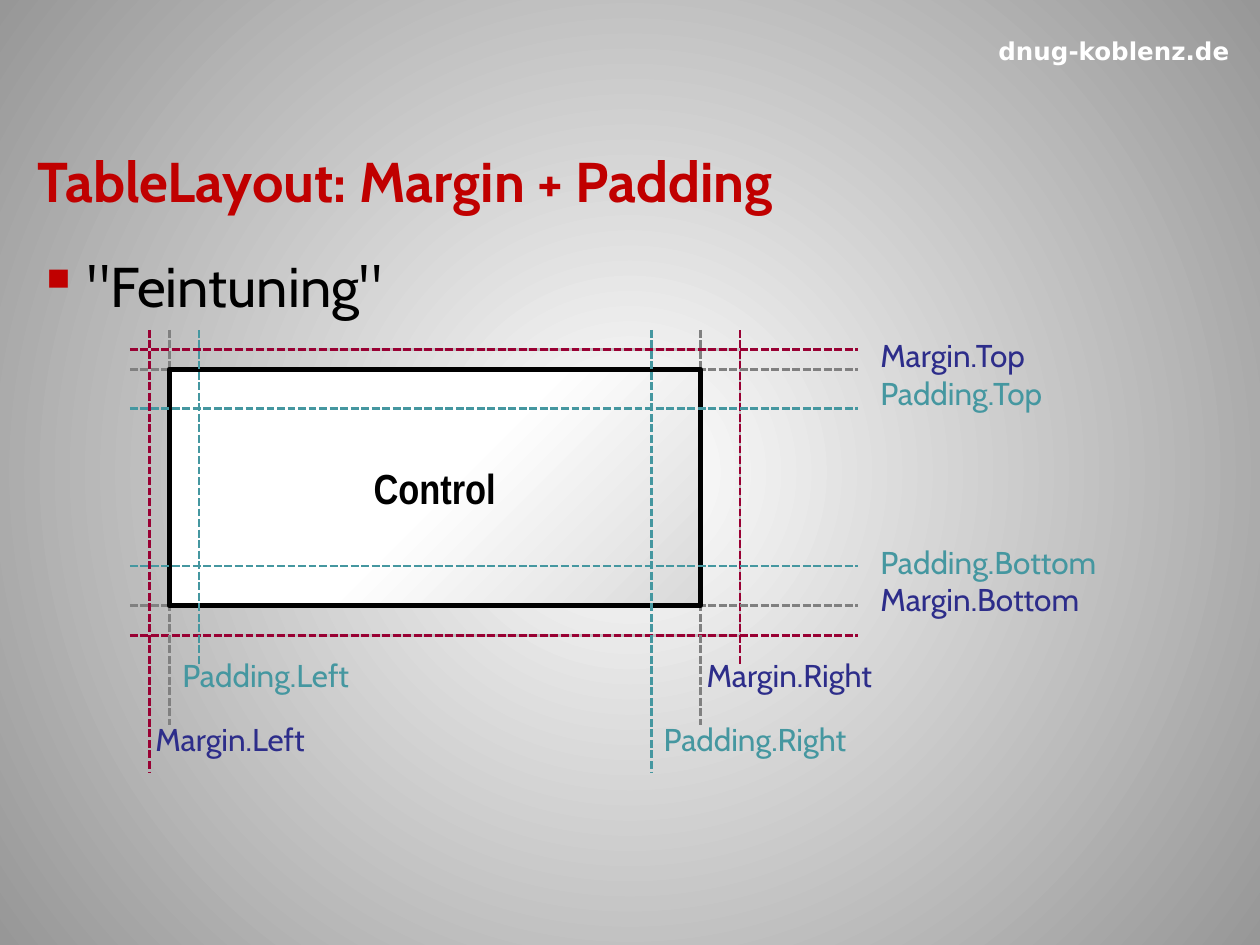
from dataclasses import dataclass
from lxml import etree
from pptx import Presentation
from pptx.dml.color import RGBColor as RGB
from pptx.enum.dml import MSO_LINE as Dash
from pptx.enum.shapes import MSO_CONNECTOR as Conn, MSO_SHAPE as Form
from pptx.enum.text import MSO_ANCHOR as Anchor, PP_ALIGN as Align
from pptx.oxml.ns import qn
from pptx.util import Pt


@dataclass(frozen=True)
class Theme:
    font: str = "Cabin"
    web: str = "DejaVu Sans"
    narrow: str = "Arial Narrow"
    white: str = "FFFFFF"
    black: str = "000000"
    edge: str = "979797"
    shade: str = "D9D9D9"
    frame: str = "BFBFBF"
    grey: str = "808080"
    red: str = "C00000"
    wine: str = "990033"
    teal: str = "4597A0"
    navy: str = "2D2D8A"
    head: int = 32
    mid: int = 24
    note: int = 18
    small: int = 14
    thin: float = 1.5
    thick: float = 3


T = Theme()


def node(root, tag, **attrs):
    """Append a child element with plain attributes."""
    kid = etree.SubElement(root, qn(tag))
    for key, val in attrs.items():
        kid.set(key, str(val))
    return kid


def blend(fill, root, stops):
    """Give a fill its colour stops; return the bare gradient element."""
    fill.gradient()
    grad = next(root.iter(qn("a:gradFill")))
    for kid in list(grad):
        grad.remove(kid)
    row = node(grad, "a:gsLst")
    for pos, color in stops:
        node(node(row, "a:gs", pos=pos * 1000), "a:srgbClr", val=color)
    return grad


def style(par, size, color, font=T.font, bold=False):
    par.font.size, par.font.name, par.font.bold = Pt(size), font, bold
    par.font.color.rgb = RGB.from_string(color)


def label(slide, box, lines, size=T.note, font=T.font, bold=False,
          anchor=Anchor.TOP, align=Align.LEFT):
    """Text box with one (text, colour) pair a paragraph."""
    frame = slide.shapes.add_textbox(*map(Pt, box)).text_frame
    frame.word_wrap = True
    frame.vertical_anchor = anchor
    for i, (text, color) in enumerate(lines):
        par = frame.add_paragraph() if i else frame.paragraphs[0]
        par.text, par.alignment = text, align
        style(par, size, color, font, bold)
    return frame


def shade(run):
    """Drop shadow behind the letters."""
    glow = node(node(run.font._element, "a:effectLst"), "a:outerShdw",
                blurRad=38100, dist=38100, dir=2700000, algn="tl")
    node(node(glow, "a:srgbClr", val=T.black), "a:alpha", val=43137)


def point(slide, box, text):
    """Body text with a square bullet."""
    frame = label(slide, box, [])
    par = frame.paragraphs[0]
    par.text = text
    props = par._p.get_or_add_pPr()
    props.set("marL", str(Pt(28.8)))
    props.set("indent", str(-Pt(28.8)))
    node(node(props, "a:buClr"), "a:srgbClr", val=T.red)
    node(props, "a:buChar", char="▪")
    style(par, T.head, T.black)


def guide(slide, color, x1, y1, x2, y2):
    line = slide.shapes.add_connector(Conn.STRAIGHT, *map(Pt, (x1, y1, x2, y2)))
    line.line.color.rgb = RGB.from_string(color)
    line.line.width = Pt(T.thin)
    line.line.dash_style = Dash.SQUARE_DOT
    node(line._element.spPr, "a:effectLst")


def guides(slide, color, cols, rows):
    """Columns are (x, end) pairs, rows are heights."""
    for x, end in cols:
        guide(slide, color, x, 188.5, x, end)
    for y in rows:
        guide(slide, color, 74.2, y, 490.3, y)


def block(slide, box, color, width):
    rect = slide.shapes.add_shape(Form.RECTANGLE, *map(Pt, box))
    rect.shadow.inherit = False
    rect.fill.background()
    rect.line.color.rgb = RGB.from_string(color)
    rect.line.width = Pt(width)
    return rect


def control(slide, box):
    rect = block(slide, box, T.black, T.thick)
    stops = [(0, T.shade), (50, T.white), (100, T.white)]
    grad = blend(rect.fill, rect._element.spPr, stops)
    node(grad, "a:lin", ang=225 * 60000, scaled=0)
    frame = rect.text_frame
    frame.word_wrap = False
    frame.vertical_anchor = Anchor.MIDDLE
    par = frame.paragraphs[0]
    par.text, par.alignment = "Control", Align.CENTER
    style(par, T.mid, T.black, T.narrow, True)


def main():
    deck = Presentation()
    deck.slide_width, deck.slide_height = Pt(720), Pt(540)
    slide = deck.slides.add_slide(deck.slide_layouts[6])

    # Background: light centre, darker rim
    grad = blend(slide.background.fill, slide.element,
                 [(0, T.white), (100, T.edge)])
    ring = node(grad, "a:path", path="circle")
    node(ring, "a:fillToRect", l=50000, t=50000, r=50000, b=50000)

    # Header, title and body
    label(slide, (553, 15, 167, 28), [("dnug-koblenz.de", T.white)],
          T.small, T.web, True, Anchor.MIDDLE, Align.CENTER)
    title = label(slide, (14.4, 65.5, 692, 75),
                  [("TableLayout: Margin + Padding", T.red)],
                  T.head, bold=True, anchor=Anchor.MIDDLE)
    shade(title.paragraphs[0].runs[0])
    point(slide, (14.4, 140.4, 692, 399.6), "\"Feintuning\"")

    # Edges of the control, its margin and its padding
    left, top, right, low = 96.7, 211, 400.3, 346
    short, mid, long = 380, 414, 442
    out = (left - 11.2, top - 11.2, right + 22.6, low + 17)
    block(slide, (out[0], out[1], out[2] - out[0], out[3] - out[1]),
          T.frame, T.thin)
    guides(slide, T.wine, [(out[0], long), (out[2], short)], (out[1], out[3]))
    guides(slide, T.grey, [(left, mid), (right, mid)], (top, low))
    control(slide, (left, top, right - left, low - top))
    guides(slide, T.teal, [(left + 17, short), (right - 28, long)],
           (top + 22.5, low - 22.5))

    # Labels
    for x, y, wide, *lines in (
        (496, 188.5, 125, ("Margin.Top", T.navy), ("Padding.Top", T.teal)),
        (496, 306.5, 156, ("Padding.Bottom", T.teal),
         ("Margin.Bottom", T.navy)),
        (396.7, 371.5, 127, ("Margin.Right", T.navy)),
        (372.2, 408, 140, ("Padding.Right", T.teal)),
        (97.2, 371.5, 127, ("Padding.Left", T.teal)),
        (81.7, 408, 115, ("Margin.Left", T.navy)),
    ):
        label(slide, (x, y, wide, 36 if len(lines) == 1 else 65.5), lines)

    deck.save("out.pptx")


if __name__ == "__main__":
    main()
